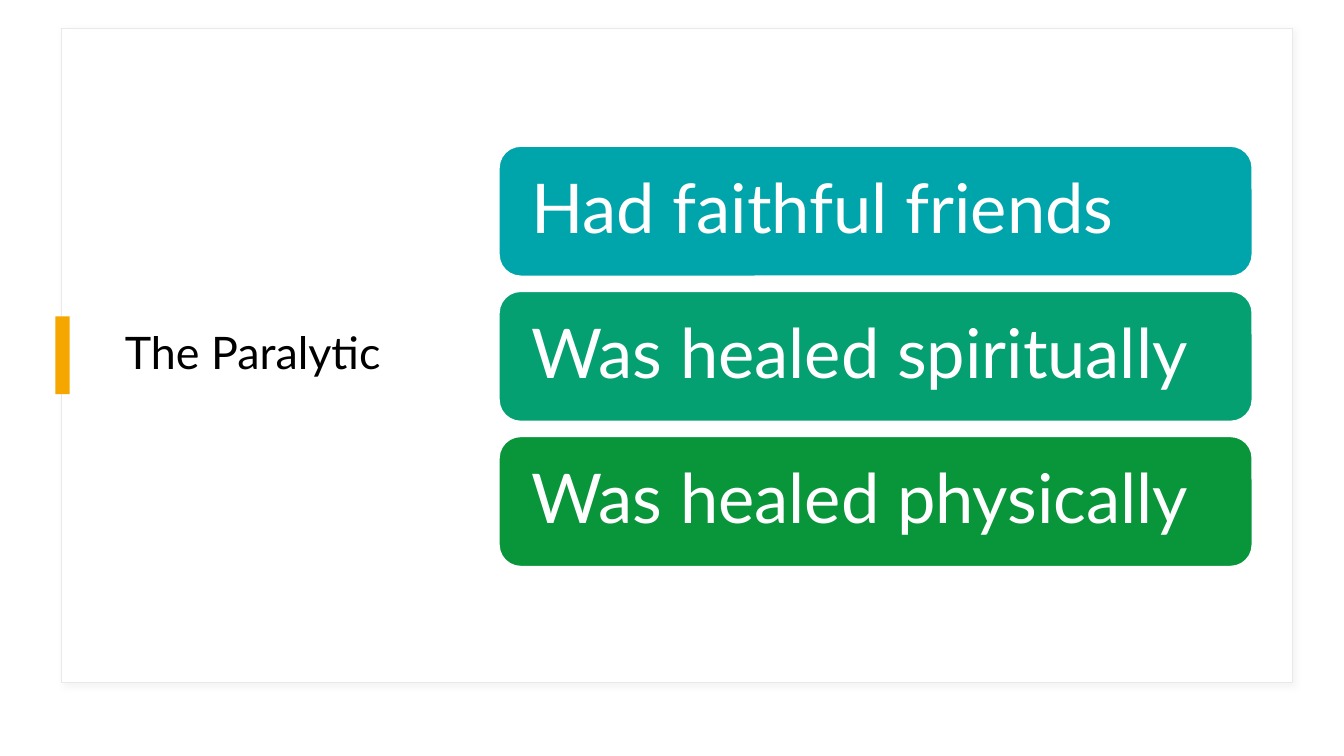
"""Build the slide about the paralytic with three stacked statements."""
from lxml import etree
from pptx import Presentation
from pptx.dml.color import RGBColor
from pptx.enum.shapes import MSO_SHAPE as Shape
from pptx.enum.text import MSO_ANCHOR as Anchor, PP_ALIGN as Align
from pptx.oxml import parse_xml
from pptx.util import Inches, Pt

TITLE = "The Paralytic"
STATEMENTS = [
    ("Had faithful friends", "teal"),
    ("Was healed spiritually", "sea"),
    ("Was healed physically", "green"),
]
COLORS = {
    "white": "FFFFFF", "black": "000000", "border": "E9E9E9", "shadow": "D9D9D9",
    "accent": "F5A700", "teal": "00A5AB", "sea": "05A071", "green": "09963B",
}
FONT = "Lato"
CARD_LEFT, CARD_TOP, CARD_WIDTH, CARD_HEIGHT, CARD_STEP = 4.95, 1.45, 7.47, 1.29, 1.44
SHADOW = (
    '<a:effectLst xmlns:a="http://schemas.openxmlformats.org/drawingml/2006/main">'
    '<a:outerShdw blurRad="50800" dist="38100" dir="2700000" algn="tl" rotWithShape="0">'
    f'<a:srgbClr val="{COLORS["shadow"]}"><a:alpha val="30000"/></a:srgbClr>'
    '</a:outerShdw></a:effectLst>'
)


def rgb(name):
    return RGBColor.from_string(COLORS[name])


def add_box(page, kind, area, fill, line=None):
    box = page.shapes.add_shape(kind, *map(Inches, area))
    box.shadow.inherit = False
    box.fill.solid()
    box.fill.fore_color.rgb = rgb(fill)
    if line:
        box.line.color.rgb = rgb(line)
        box.line.width = Pt(1)
    else:
        box.line.fill.background()
    return box


def write(box, text, size, color, inset_x=0.1, inset_y=0.05):
    frame = box.text_frame
    frame.word_wrap = True
    frame.vertical_anchor = Anchor.MIDDLE
    frame.margin_left = frame.margin_right = Inches(inset_x)
    frame.margin_top = frame.margin_bottom = Inches(inset_y)
    para = frame.paragraphs[0]
    para.alignment = Align.LEFT
    para.line_spacing = 0.9
    span = para.add_run()
    span.text = text
    span.font.name = FONT
    span.font.size = Pt(size)
    span.font.color.rgb = rgb(color)


def add_shadow(box):
    properties = box.fill._xPr
    for effects in properties.findall(etree.QName(parse_xml(SHADOW)).text):
        properties.replace(effects, parse_xml(SHADOW))


def main():
    deck = Presentation()
    deck.slide_width, deck.slide_height = Inches(13.33), Inches(7.5)
    page = deck.slides.add_slide(deck.slide_layouts[6])

    panel = add_box(page, Shape.RECTANGLE, (0.61, 0.28, 12.21, 6.49), "white", "border")
    add_shadow(panel)
    title = page.shapes.add_textbox(*map(Inches, (1.14, 0.55, 3.27, 5.95)))
    write(title, TITLE, 32, "black")
    add_box(page, Shape.RECTANGLE, (0.55, 3.14, 0.14, 0.77), "accent")

    for index, (text, fill) in enumerate(STATEMENTS):
        area = (CARD_LEFT, CARD_TOP + index * CARD_STEP, CARD_WIDTH, CARD_HEIGHT)
        card = add_box(page, Shape.ROUNDED_RECTANGLE, area, fill, "white")
        write(card, text, 49, "white", inset_x=0.26, inset_y=0.2)

    deck.save("out.pptx")


if __name__ == "__main__":
    main()
